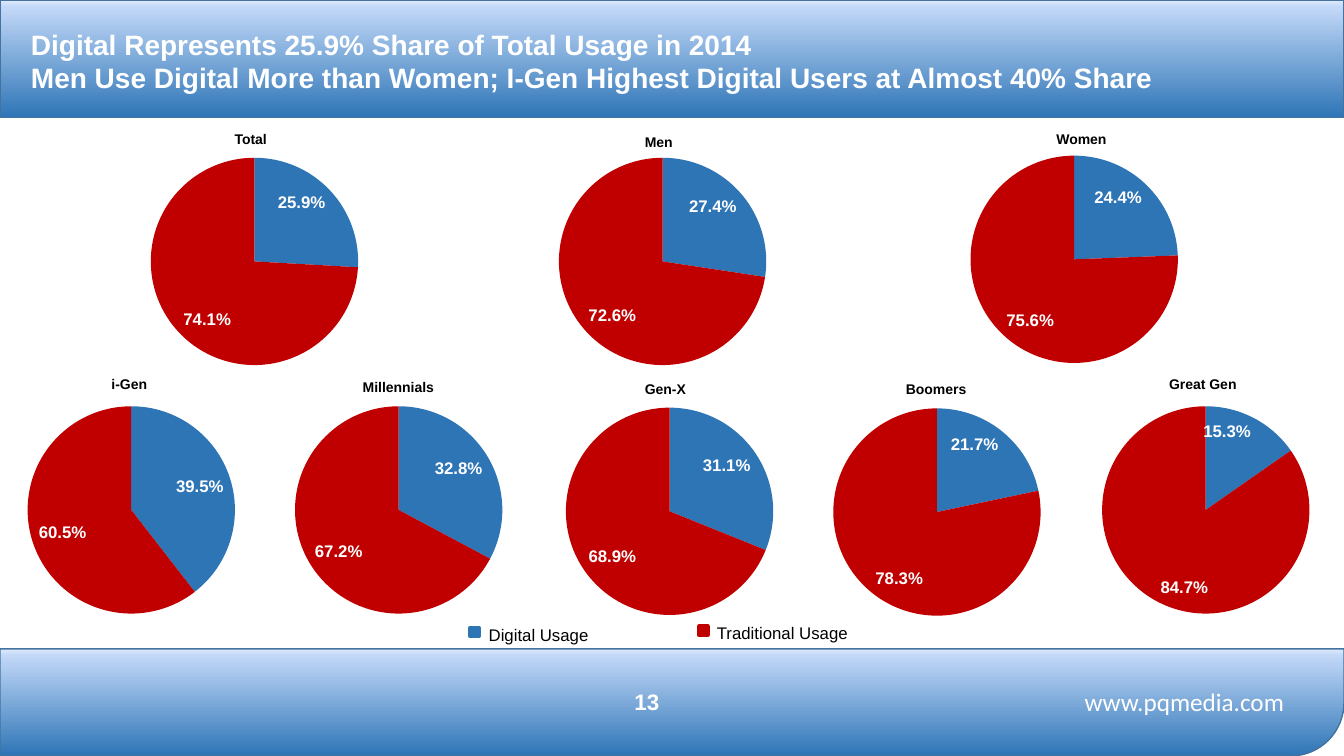
from pptx import Presentation
from pptx.chart import data as chart_data
from pptx.dml.color import RGBColor
from pptx.enum import chart as chart_enum, shapes, text
from pptx.oxml import ns, parse_xml
from pptx.util import Pt

BLUE, RED, WHITE, BLACK, EDGE = "2E75B6", "C00000", "FFFFFF", "000000", "43739E"
BAND_STOPS = [(0, BLUE), (94, "C2D8F8"), (100, "E1EBFB")]
# top, height, corner rounding
BANDS = [(463.5, 76.5, 0.5), (0, 84, 0)]
TITLE = [
    "Digital Represents 25.9% Share of Total Usage in 2014",
    "Men Use Digital More than Women; I-Gen Highest Digital Users at Almost 40% Share",
]
# group, digital share, chart left and top, caption left, top and width
PIES = [
    ("Total", 0.259, (59, 111), (160.5, 90, 39)),
    ("Men", 0.274, (350.5, 111), (453.5, 92, 34.5)),
    ("Women", 0.244, (644.5, 109.5), (747.5, 89.5, 51)),
    ("i-Gen", 0.395, (-29, 288.5), (72.5, 265, 40)),
    ("Millennials", 0.328, (162, 288.5), (252, 267, 66)),
    ("Gen-X", 0.311, (355.5, 289.5), (453.5, 268, 44)),
    ("Boomers", 0.217, (546.5, 290), (640, 268, 58)),
    ("Great Gen", 0.153, (738.5, 288.5), (828, 265, 63.5)),
]
PIE_WIDTH, PIE_HEIGHT = 242, 155
PLOT = {"x": 0.192, "y": 0.011, "w": 0.631, "h": 0.956}
# label, colour, marker left and top, text left, top and width
LEGEND = [
    ("Digital Usage", BLUE, (336, 448.5), (342, 443, 86.5)),
    ("Traditional Usage", RED, (499.5, 447.5), (505, 441.5, 108.5)),
]


def rgb(colour):
    return RGBColor.from_string(colour)


def style_font(font, size, colour, bold=False, name="Arial"):
    font.name, font.size, font.bold = name, Pt(size), bold
    font.color.rgb = rgb(colour)


def add_shape(kind, left, top, width, height, line_colour, line_width):
    shape = slide.shapes.add_shape(kind, Pt(left), Pt(top), Pt(width), Pt(height))
    shape.shadow.inherit = False
    shape.line.color.rgb = rgb(line_colour)
    shape.line.width = Pt(line_width)
    return shape


def add_band(top, height, rounding):
    """Add a full-width bar that fades from dark at the bottom to light."""
    band = add_shape(shapes.MSO_SHAPE.ROUND_1_RECTANGLE, 0, top, 960, height, EDGE, 1)
    band.adjustments[0] = rounding
    properties = band.element.spPr
    properties.find(ns.qn("a:xfrm")).set("flipV", "1")
    stops = "".join(
        f'<a:gs pos="{position * 1000}"><a:srgbClr val="{colour}"/></a:gs>'
        for position, colour in BAND_STOPS
    )
    properties.find(ns.qn("a:prstGeom")).addnext(parse_xml(
        f'<a:gradFill {ns.nsdecls("a")} rotWithShape="1"><a:gsLst>{stops}</a:gsLst>'
        '<a:lin ang="5400000" scaled="0"/></a:gradFill>'
    ))


def add_text(lines, left, top, width, height, size, colour, bold=False,
             name="Arial", wrap=False, centred=False):
    box = slide.shapes.add_textbox(Pt(left), Pt(top), Pt(width), Pt(height))
    frame = box.text_frame
    frame.word_wrap = wrap
    if centred:
        frame.vertical_anchor = text.MSO_ANCHOR.MIDDLE
    frame.text = "\n".join(lines)
    for paragraph in frame.paragraphs:
        style_font(paragraph.font, size, colour, bold, name)
        if centred:
            paragraph.alignment = text.PP_ALIGN.CENTER


def add_pie(digital, left, top):
    shares = chart_data.CategoryChartData(number_format="0.0%")
    shares.categories = ["Digital Usage", "Traditional Usage"]
    shares.add_series("Share", [digital, round(1 - digital, 3)])
    chart = slide.shapes.add_chart(
        chart_enum.XL_CHART_TYPE.PIE,
        Pt(left), Pt(top), Pt(PIE_WIDTH), Pt(PIE_HEIGHT), shares,
    ).chart
    chart.has_title = chart.has_legend = False
    style_font(chart.font, 10, BLACK, name="Calibri")
    plot = chart.plots[0]
    plot.vary_by_categories = True
    for index, colour in enumerate([BLUE, RED]):
        fill = plot.series[0].points[index].format.fill
        fill.solid()
        fill.fore_color.rgb = rgb(colour)
    plot.has_data_labels = True
    labels = plot.data_labels
    labels.show_value, labels.show_percentage = True, False
    labels.number_format, labels.number_format_is_linked = "0.0%", False
    labels.position = chart_enum.XL_LABEL_POSITION.INSIDE_END
    style_font(labels.font, 12, WHITE, bold=True)
    set_plot_layout(chart)


def set_plot_layout(chart):
    area = chart.element.find(".//" + ns.qn("c:plotArea"))
    for layout in area.findall(ns.qn("c:layout")):
        area.remove(layout)
    sizes = "".join(f'<c:{key} val="{value}"/>' for key, value in PLOT.items())
    area.insert(0, parse_xml(
        f'<c:layout {ns.nsdecls("c")}><c:manualLayout><c:layoutTarget val="inner"/>'
        f'<c:xMode val="edge"/><c:yMode val="edge"/>{sizes}</c:manualLayout></c:layout>'
    ))


presentation = Presentation()
presentation.slide_width, presentation.slide_height = Pt(960), Pt(540)
slide = presentation.slides.add_slide(presentation.slide_layouts[6])

for band in BANDS:
    add_band(*band)
add_text(["13"], 378, 486.5, 168, 29, 16, WHITE, bold=True, wrap=True, centred=True)
add_text(["www.pqmedia.com"], 732, 486.5, 228, 29, 18, WHITE,
         name="Calibri", wrap=True, centred=True)
add_text(TITLE, 15, 16, 937.5, 48, 20, WHITE, bold=True, wrap=True)

for label, colour, marker_place, (left, top, width) in LEGEND:
    marker = add_shape(shapes.MSO_SHAPE.RECTANGLE, *marker_place, 6, 6, colour, 3)
    marker.fill.solid()
    marker.fill.fore_color.rgb = rgb(colour)
    add_text([label], left, top, width, 22, 12, BLACK)

for group, digital, chart_place, (left, top, width) in PIES:
    add_pie(digital, *chart_place)
    add_text([group], left, top, width, 19.5, 10, BLACK, bold=True)

presentation.save("out.pptx")
